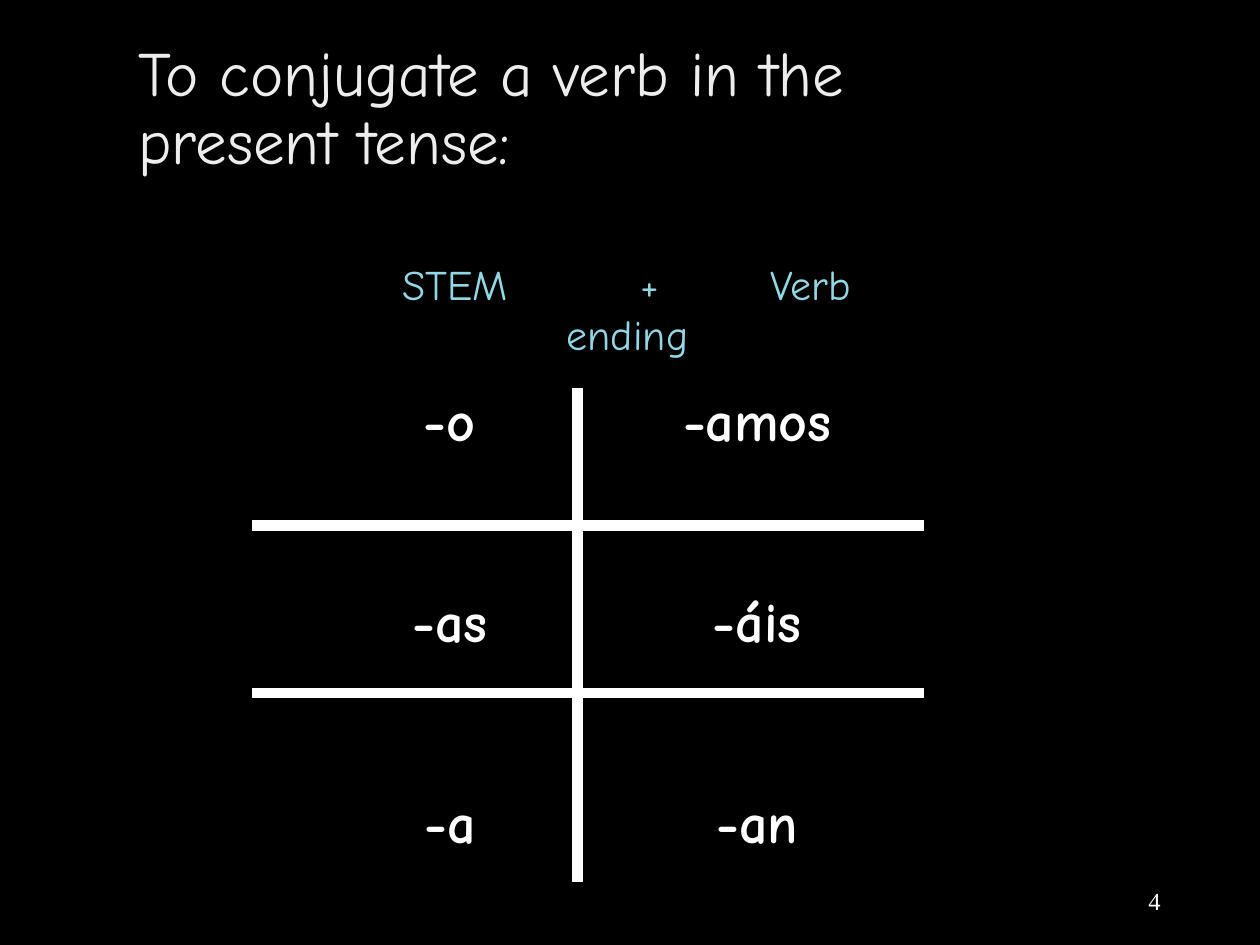
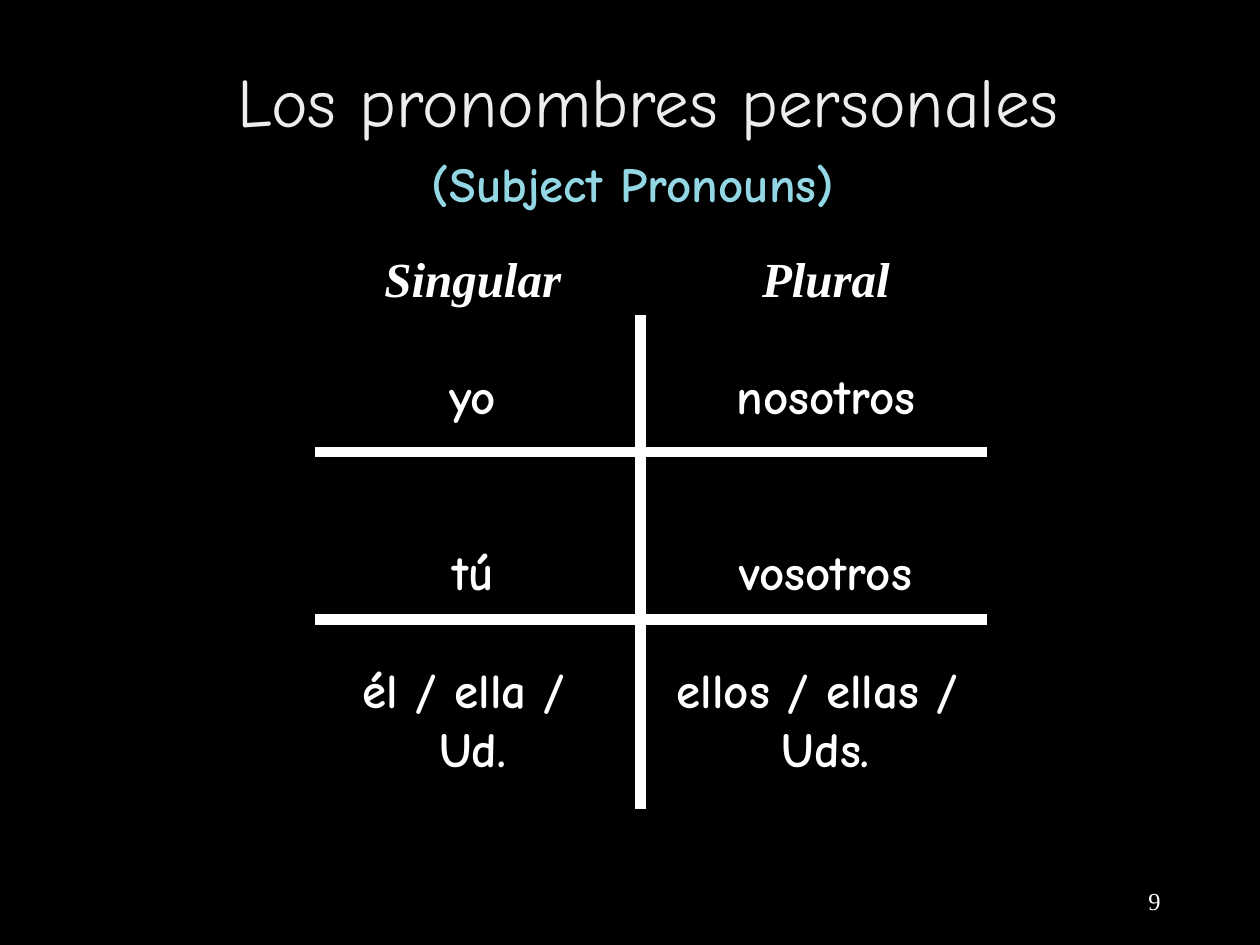
"""Build two Spanish grammar slides: present tense endings and subject pronouns."""
from lxml.etree import SubElement
from pptx import Presentation
from pptx.dml.color import RGBColor
from pptx.enum.shapes import MSO_CONNECTOR
from pptx.enum.text import MSO_ANCHOR, PP_ALIGN
from pptx.oxml.ns import qn
from pptx.util import Cm, Pt

BLACK = RGBColor(0, 0, 0)
WHITE = RGBColor(255, 255, 255)
PALE = RGBColor(0xED, 0xED, 0xED)
AQUA = RGBColor(0x94, 0xD7, 0xE4)
HAND = "Comic Neue"
SERIF = "Times New Roman"
LEFT, MID, RIGHT = PP_ALIGN.LEFT, PP_ALIGN.CENTER, PP_ALIGN.RIGHT


def write(slide, spot, text, size, color=WHITE, font=HAND, align=MID,
          bold=False, slant=False, anchor=MSO_ANCHOR.TOP, stops=()):
    box = slide.shapes.add_textbox(*[Cm(n) for n in spot])
    frame = box.text_frame
    frame.text = text
    frame.word_wrap = True
    frame.vertical_anchor = anchor
    for para in frame.paragraphs:
        para.alignment = align
        if stops and "\t" in para.text:
            tabs = SubElement(para._p.get_or_add_pPr(), qn("a:tabLst"))
            for stop in stops:
                SubElement(tabs, qn("a:tab"), pos=str(Cm(stop)), algn="ctr")
            para.alignment = LEFT
        for run in para.runs:
            run.font.size = Pt(size)
            run.font.name = font
            run.font.bold = bold
            run.font.italic = slant
            run.font.color.rgb = color
    return frame


def rule(slide, left, top, right, low):
    line = slide.shapes.add_connector(
        MSO_CONNECTOR.STRAIGHT, Cm(left), Cm(top), Cm(right), Cm(low))
    line.line.color.rgb = WHITE
    line.line.width = Pt(6)
    SubElement(line._element.spPr, qn("a:effectLst"))


deck = Presentation()
deck.slide_width, deck.slide_height = Cm(25.4), Cm(19.05)

pages = [
    dict(num="4", title="To conjugate a verb in the present tense:",
         spot=(2.54, 0.64, 19.05, 3.18), size=36, align=LEFT,
         grid=(5.08, 7.83), mids=(9.07, 15.27), tops=(7.65, 11.7, 15.75),
         cells=(("-o", "-as", "-a"), ("-amos", "-áis", "-an")), type=32),
    dict(num="9", title="Los pronombres personales",
         spot=(0, 1.27, 21.59, 1.7), size=39.6, align=RIGHT,
         grid=(6.35, 6.35), mids=(9.53, 16.65), tops=(7.24, 10.8, 13.17),
         cells=(("yo", "tú", "él / ella / \nUd."),
                ("nosotros", "vosotros", "ellos / ellas / \nUds.")), type=28),
]

for page in pages:
    slide = deck.slides.add_slide(deck.slide_layouts[6])
    slide.background.fill.solid()
    slide.background.fill.fore_color.rgb = BLACK
    write(slide, (17.93, 17.65, 5.72, 1.02), page["num"], 14, font=SERIF,
          align=RIGHT, anchor=MSO_ANCHOR.MIDDLE)
    head = write(slide, page["spot"], page["title"], page["size"], PALE,
                 align=page["align"], anchor=MSO_ANCHOR.MIDDLE)
    head.paragraphs[0].line_spacing = 0.9

    for mid, words in zip(page["mids"], page["cells"]):
        for top, word in zip(page["tops"], words):
            write(slide, (mid - 3.75, top, 7.5, 1.6), word, page["type"],
                  bold=True)

    left, top = page["grid"]
    rule(slide, left + 6.56, top, left + 6.56, top + 9.96)
    for drop in (2.76, 6.14):
        rule(slide, left, top + drop, left + 13.55, top + drop)

verbs, names = deck.slides
write(verbs, (6.1, 5.08, 13.1, 2.3), "\tSTEM\t+\tVerb\nending", 24, AQUA,
      stops=(2.82, 6.75, 10))
write(names, (8.05, 2.97, 9.42, 1.45), "(Subject Pronouns)", 28, AQUA,
      bold=True)
for mid, word in zip(pages[1]["mids"], ("Singular", "Plural")):
    write(names, (mid - 3.75, 4.88, 7.5, 1.4), word, 28, font=SERIF,
          bold=True, slant=True)

deck.save("out.pptx")
